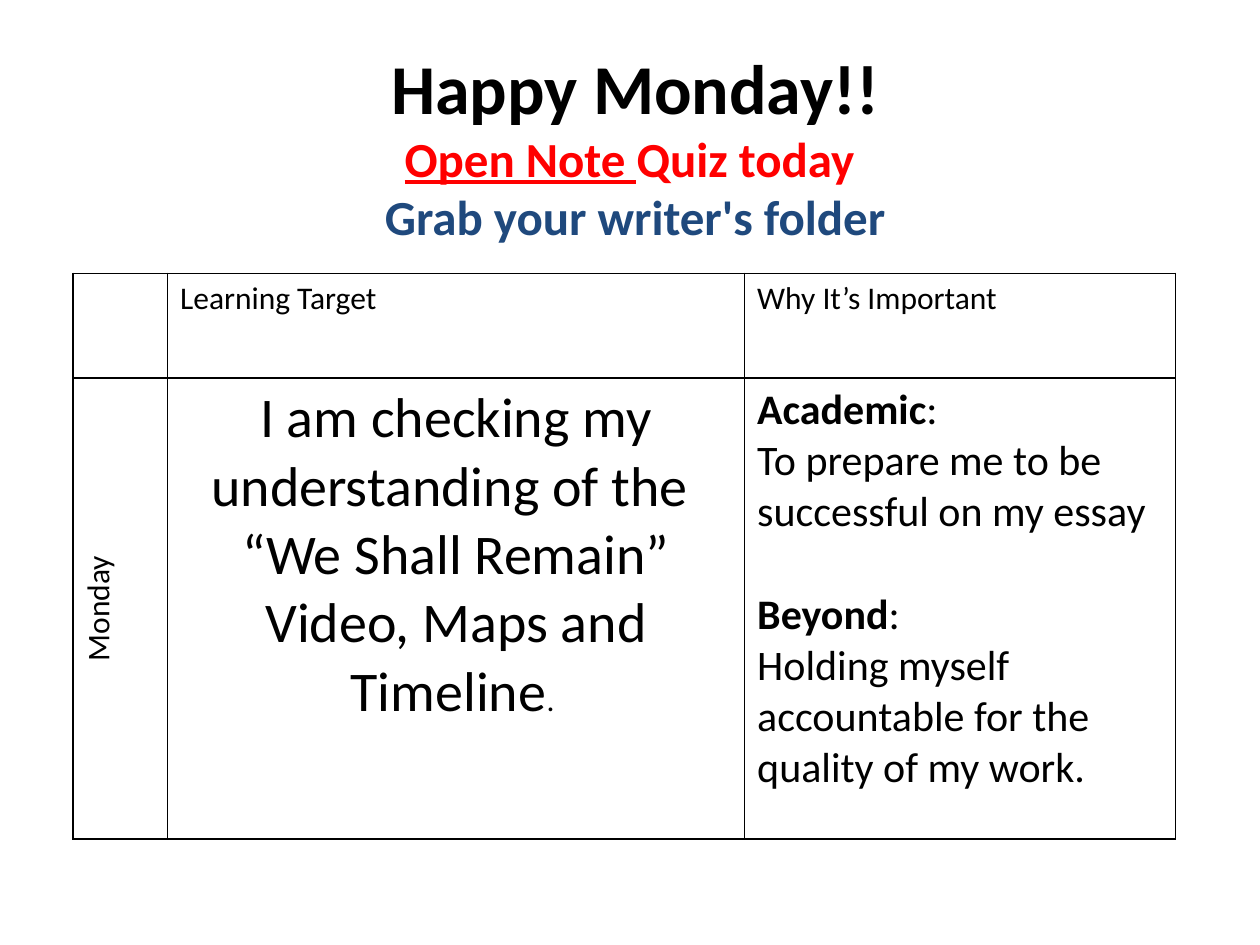
from lxml import etree
from pptx import Presentation
from pptx.dml.color import RGBColor
from pptx.enum.text import MSO_ANCHOR, MSO_AUTO_SIZE, PP_ALIGN
from pptx.oxml.ns import qn
from pptx.util import Inches, Pt

CENTER, LEFT = PP_ALIGN.CENTER, PP_ALIGN.LEFT
TOP, MIDDLE = MSO_ANCHOR.TOP, MSO_ANCHOR.MIDDLE
FONT = "Calibri"
COLORS = {"text": "000000", "border": "000000", "alert": "FF0000", "reminder": "1F497D"}
TITLE_ONLY = 5
BLANK_LINE = 29.3  # height of one 24 pt line, in points

HEADING = [
    [("Happy Monday!!", {"size": 40, "bold": True})],
    [("Open Note ", {"size": 28, "bold": True, "underline": True, "color": "alert"}),
     ("Quiz today ", {"size": 28, "bold": True, "color": "alert"})],
    [("Grab your writer's folder", {"size": 28, "bold": True, "color": "reminder"})],
]
TARGET = [
    [("I am checking my understanding of the ", {"size": 32})],
    [("“We Shall Remain” Video, Maps and Timeline", {"size": 32}), (". ", {})],
]


def reason(label, text):
    return [[(label, {"size": 24, "bold": True}), (":", {"size": 24})],
            [(text, {"size": 24})]]


REASONS = (reason("Academic", "To prepare me to be successful on my essay")
           + reason("Beyond", "Holding myself accountable for the quality of my work."))
ROWS = [
    [[], [[("Learning Target", {})]], [[("Why It’s Important", {})]]],
    [[[("Monday", {})]], TARGET, REASONS],
]


def write_paragraphs(text_frame, paragraphs, alignment):
    """Fill a text frame with paragraphs, each a list of (text, format values)."""
    for index, runs in enumerate(paragraphs):
        paragraph = text_frame.paragraphs[0] if index == 0 else text_frame.add_paragraph()
        paragraph.alignment = alignment
        for text, formats in runs:
            run = paragraph.add_run()
            run.text = text
            values = {"name": FONT, "size": 18, "bold": False, "underline": False,
                      "color": "text"} | formats
            run.font.color.rgb = RGBColor.from_string(COLORS[values.pop("color")])
            values["size"] = Pt(values["size"])
            for name, value in values.items():
                setattr(run.font, name, value)


def outline_cell(cell):
    properties = cell._tc.get_or_add_tcPr()
    for side in ("a:lnL", "a:lnR", "a:lnT", "a:lnB"):
        line = etree.SubElement(properties, qn(side), w=str(Pt(1)))
        fill = etree.SubElement(line, qn("a:solidFill"))
        etree.SubElement(fill, qn("a:srgbClr"), val=COLORS["border"])
    cell.fill.background()


def add_heading(slide, left, top, width, height):
    title = slide.shapes.title
    box = {"left": left, "top": top, "width": width, "height": height}
    for name, value in box.items():
        setattr(title, name, Inches(value))
    frame = title.text_frame
    formats = {"word_wrap": True, "auto_size": MSO_AUTO_SIZE.NONE, "vertical_anchor": TOP}
    for name, value in formats.items():
        setattr(frame, name, value)
    write_paragraphs(frame, HEADING, CENTER)


def add_target_table(slide, left, top, widths, heights):
    frame = slide.shapes.add_table(
        len(heights), len(widths), Inches(left), Inches(top),
        Inches(sum(widths)), Inches(sum(heights)))
    table = frame.table
    table.first_row = table.horz_banding = False
    for column, width in zip(table.columns, widths):
        column.width = Inches(width)
    for row, height in zip(table.rows, heights):
        row.height = Inches(height)
    for row, contents in enumerate(ROWS):
        for column, paragraphs in enumerate(contents):
            cell = table.cell(row, column)
            outline_cell(cell)
            centered = row == 1 and column < 2
            write_paragraphs(cell.text_frame, paragraphs, CENTER if centered else LEFT)

    day = table.cell(1, 0)
    day.vertical_anchor = MIDDLE
    day._tc.get_or_add_tcPr().set("vert", "vert270")
    beyond = table.cell(1, 2).text_frame.paragraphs[2]
    beyond.space_before = Pt(BLANK_LINE)


def main():
    presentation = Presentation()
    presentation.slide_width, presentation.slide_height = Inches(10), Inches(7.5)
    slide = presentation.slides.add_slide(presentation.slide_layouts[TITLE_ONLY])
    add_target_table(slide, 0.58, 2.17, widths=(0.75, 4.58, 3.42), heights=(0.83, 3.66))
    add_heading(slide, 1.08, 0.3, 7.92, 1.72)
    presentation.save("out.pptx")


if __name__ == "__main__":
    main()
